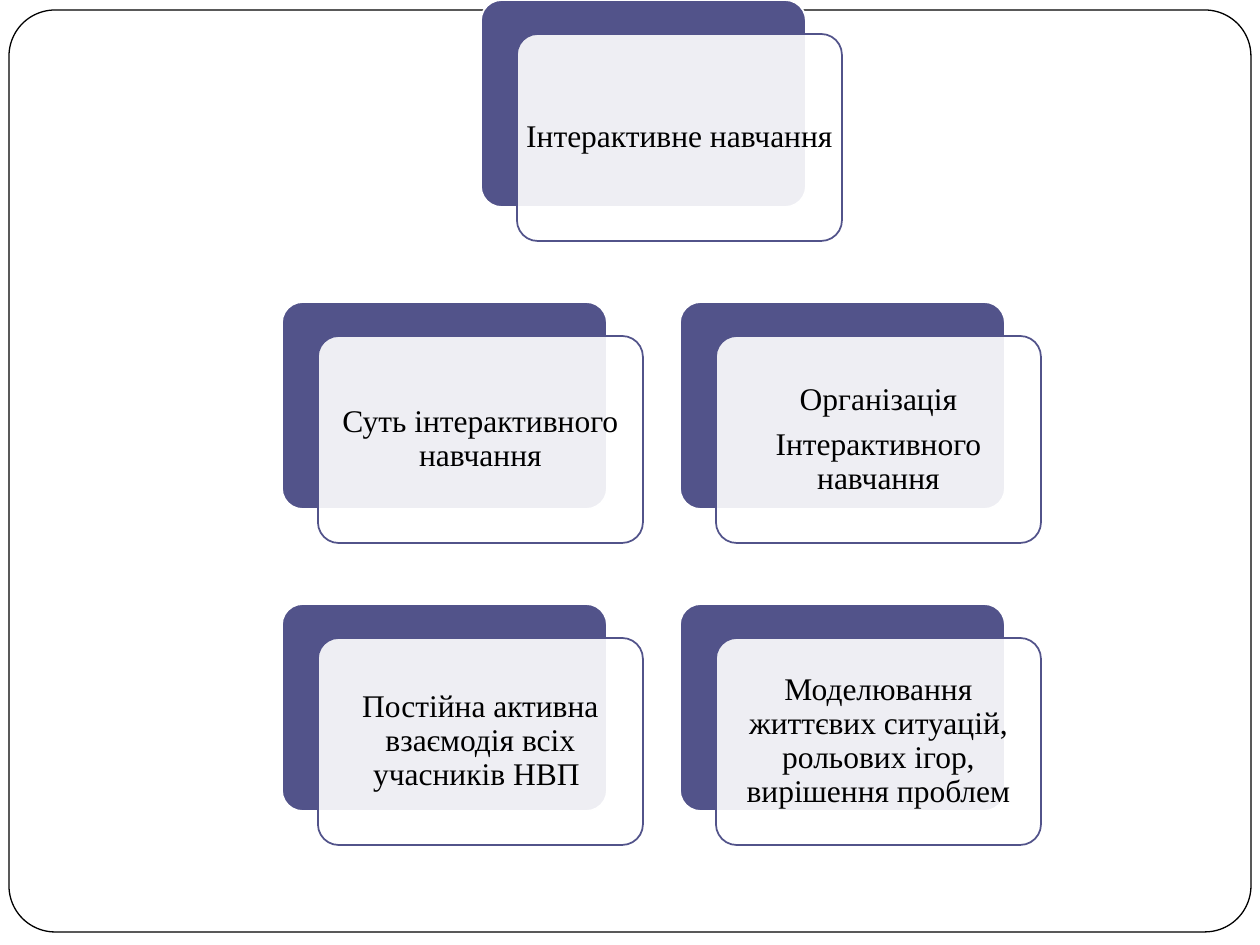
from lxml import etree
from pptx import Presentation
from pptx import util as u
from pptx.dml.color import RGBColor
from pptx.enum import shapes, text
from pptx.oxml.ns import qn

SCALE = 914400 / 126
HUES = {"white": "FFFFFF", "black": "000000", "violet": "52538A"}
FONT = {"name": "Times New Roman", "size": u.Pt(18)}
PARA = {"alignment": text.PP_ALIGN.CENTER, "line_spacing": 0.9,
        "space_after": u.Pt(6.3)}
FRAME = {"word_wrap": True, "vertical_anchor": text.MSO_ANCHOR.MIDDLE}
SIDES = ("left", "top", "right", "bottom")

CARD = (325, 207)
SHIFT = (36, 34)
LEFT, TOP, COL, ROW = 282, 0, 398, 302
# Column, row and paragraphs; the root stands midway between the columns.
CARDS = [
    (0.5, 0, ["Інтерактивне навчання"]),
    (0, 1, ["Суть інтерактивного навчання"]),
    (0, 2, ["Постійна активна взаємодія всіх учасників НВП "]),
    (1, 1, ["Організація", "Інтерактивного навчання"]),
    (1, 2, ["Моделювання життєвих ситуацій, рольових ігор, "
            "вирішення проблем"]),
]


def px(num):
    return u.Emu(round(num * SCALE))


def hue(name):
    return RGBColor.from_string(HUES[name])


def assign(obj, vals):
    for key, val in vals.items():
        setattr(obj, key, val)


class Deck:
    def __init__(self, wide, high):
        self.prs = Presentation()
        assign(self.prs, {"slide_width": px(wide), "slide_height": px(high)})
        self.slide = self.prs.slides.add_slide(self.prs.slide_layouts[6])

    def panel(self, box, fill, line, width=1, bend=0.1, alpha=None):
        """Draw a rounded rectangle; alpha is its opacity in percent."""
        shape = self.slide.shapes.add_shape(
            shapes.MSO_SHAPE.ROUNDED_RECTANGLE, *map(px, box))
        shape.adjustments[0] = bend
        shape.shadow.inherit = False
        shape.fill.solid()
        shape.fill.fore_color.rgb = hue(fill)
        shape.line.color.rgb = hue(line)
        shape.line.width = u.Pt(width)
        if alpha:
            tone = shape.element.spPr.find(
                f"{qn('a:solidFill')}/{qn('a:srgbClr')}")
            etree.SubElement(tone, qn("a:alpha"), val=str(alpha * 1000))
        return shape

    def label(self, shape, lines):
        frame = shape.text_frame
        assign(frame, FRAME)
        assign(frame, {f"margin_{side}": px(2) for side in SIDES})
        frame.text = "\n".join(lines)
        for para in frame.paragraphs:
            assign(para, PARA)
            for run in para.runs:
                assign(run.font, FONT)
                run.font.color.rgb = hue("black")

    def card(self, left, top, lines):
        """Stack a see-through text panel on a solid one."""
        self.panel((left, top, *CARD), "violet", "white")
        front = (left + SHIFT[0], top + SHIFT[1], *CARD)
        self.label(self.panel(front, "white", "violet", alpha=90), lines)


def main():
    deck = Deck(1260, 945)
    deck.panel((9, 10, 1242, 922), "white", "black", 0.75, 0.05)
    for col, row, lines in CARDS:
        deck.card(LEFT + col * COL, TOP + row * ROW, lines)
    deck.prs.save("out.pptx")


if __name__ == "__main__":
    main()
